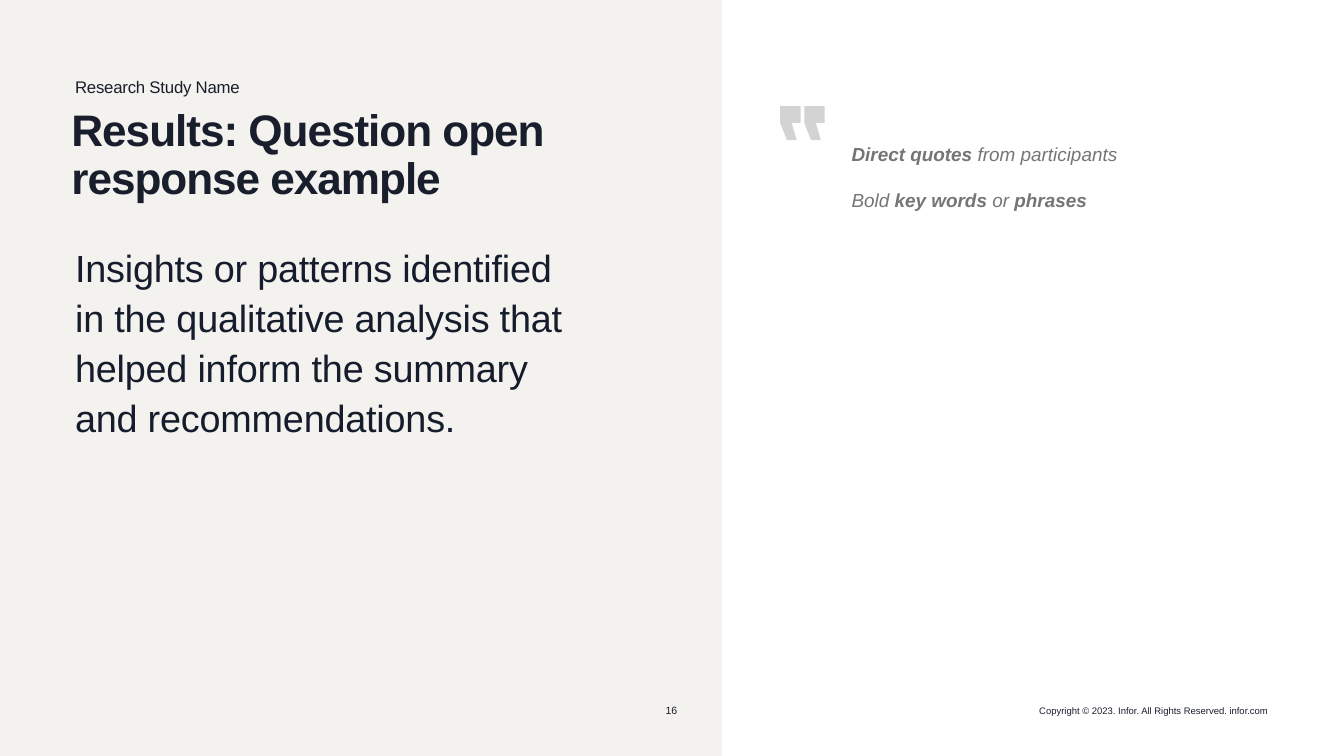
"""Build a research results slide with an insight panel and participant quotes."""
from dataclasses import dataclass

from lxml.etree import SubElement
from pptx import Presentation
from pptx.dml.color import RGBColor
from pptx.enum.shapes import MSO_SHAPE
from pptx.enum.text import MSO_ANCHOR, MSO_AUTO_SIZE, PP_ALIGN
from pptx.oxml.ns import qn
from pptx.util import Pt


@dataclass(frozen=True)
class Theme:
    font: str = "Arial"
    ink: str = "181E2C"
    body_ink: str = "151C2C"
    quote_ink: str = "757575"
    mark: str = "D3D3D3"
    panel: str = "F4F2EF"
    title: float = 42
    insight: float = 36
    quote: float = 18
    label: float = 16
    page: float = 10
    legal: float = 9


@dataclass(frozen=True)
class Box:
    x: float
    y: float
    w: float
    h: float


@dataclass(frozen=True)
class Span:
    text: str
    bold: bool = False


T = Theme()
QUOTES = (
    (Span("Direct quotes ", True), Span("from participants")),
    (Span("Bold "), Span("key words ", True), Span("or "), Span("phrases", True)),
)
MARK_OUTLINE = ((19.5, 0), (19.5, 16), (11, 16), (15.8, 32.4), (6.5, 32.4), (0, 16))
MARK_XS = (743, 766)
MARK_Y = 101


def place(sp, box: Box) -> None:
    """Move and size a shape in points."""
    sp.left, sp.top, sp.width, sp.height = map(Pt, (box.x, box.y, box.w, box.h))


def write(sp, paras, *, size: float, color: str = T.ink, italic: bool = False,
          align=PP_ALIGN.LEFT, anchor=MSO_ANCHOR.TOP, wrap: bool = True,
          inset: tuple = (0, 0), line: float = 1.0, gap: float = 0,
          track: float = 0) -> None:
    """Fill a shape with paragraphs of spans in one format."""
    tf = sp.text_frame
    tf.auto_size, tf.word_wrap, tf.vertical_anchor = MSO_AUTO_SIZE.NONE, wrap, anchor
    tf.margin_left = tf.margin_right = Pt(inset[0])
    tf.margin_top = tf.margin_bottom = Pt(inset[1])
    for i, spans in enumerate(paras):
        p = tf.add_paragraph() if i else tf.paragraphs[0]
        p.alignment, p.line_spacing = align, line
        p.space_before, p.space_after = Pt(gap if i else 0), Pt(0)
        if sp.is_placeholder:
            pPr = p._p.get_or_add_pPr()
            pPr.set("marL", "0")
            pPr.set("indent", "0")
            SubElement(pPr, qn("a:buNone"))
        for span in spans:
            r = p.add_run()
            r.text = span.text
            f = r.font
            f.name, f.size, f.bold, f.italic = T.font, Pt(size), span.bold, italic
            f.color.rgb = RGBColor.from_string(color)
            if track:
                r._r.get_or_add_rPr().set("spc", str(round(track * 100)))


def add_text(s, box: Box, paras, **fmt) -> None:
    """Add a formatted text box."""
    sp = s.shapes.add_textbox(0, 0, 0, 0)
    place(sp, box)
    write(sp, paras, **fmt)


def add_panel(s, box: Box) -> None:
    """Add the tinted panel behind the placeholders."""
    sp = s.shapes.add_shape(MSO_SHAPE.RECTANGLE, 0, 0, 0, 0)
    place(sp, box)
    sp.shadow.inherit = False
    sp.fill.solid()
    sp.fill.fore_color.rgb = sp.line.color.rgb = RGBColor.from_string(T.panel)
    sp.line.width = Pt(1)
    s.shapes._spTree.insert(2, sp._element)


def add_quote_mark(s) -> None:
    """Add the grouped pair of quote strokes."""
    group = s.shapes.add_group_shape()
    for x in MARK_XS:
        fb = group.shapes.build_freeform(Pt(x), Pt(MARK_Y))
        fb.add_line_segments([(Pt(x + dx), Pt(MARK_Y + dy)) for dx, dy in MARK_OUTLINE])
        sp = fb.convert_to_shape()
        sp.shadow.inherit = False
        sp.fill.solid()
        sp.fill.fore_color.rgb = RGBColor.from_string(T.mark)
        sp.line.fill.background()


def main() -> None:
    """Build and save the slide."""
    prs = Presentation()
    prs.slide_width, prs.slide_height = Pt(1280), Pt(720)
    s = prs.slides.add_slide(prs.slide_layouts[3])
    title, label, insight = s.placeholders

    add_panel(s, Box(0, 0, 687, 720))
    place(label, Box(71.5, 72, 1137, 16.5))
    write(label, [[Span("Research Study Name")]], size=T.label, line=1.05, track=-0.2)
    place(insight, Box(71.5, 229, 472, 419))
    write(insight, [[Span("Insights or patterns identified in the qualitative analysis "
                          "that helped inform the summary and recommendations.")]],
          size=T.insight, color=T.body_ink, line=1.1, track=-0.2)
    place(title, Box(68, 103.5, 499, 86.5))
    write(title, [[Span("Results: Question open response example", True)]],
          size=T.title, line=0.9, track=-1)

    add_quote_mark(s)
    add_text(s, Box(804, 132, 393, 73), QUOTES, size=T.quote, color=T.quote_ink,
             italic=True, inset=(7.2, 3.6), gap=22)
    add_text(s, Box(633.5, 670.5, 12, 12), [[Span("16")]], size=T.page,
             align=PP_ALIGN.CENTER, anchor=MSO_ANCHOR.MIDDLE, wrap=False)
    add_text(s, Box(985.5, 671, 222, 11),
             [[Span("Copyright © 2023. Infor. All Rights Reserved. infor.com")]],
             size=T.legal, align=PP_ALIGN.RIGHT, anchor=MSO_ANCHOR.MIDDLE, wrap=False)
    prs.save("out.pptx")


if __name__ == "__main__":
    main()
